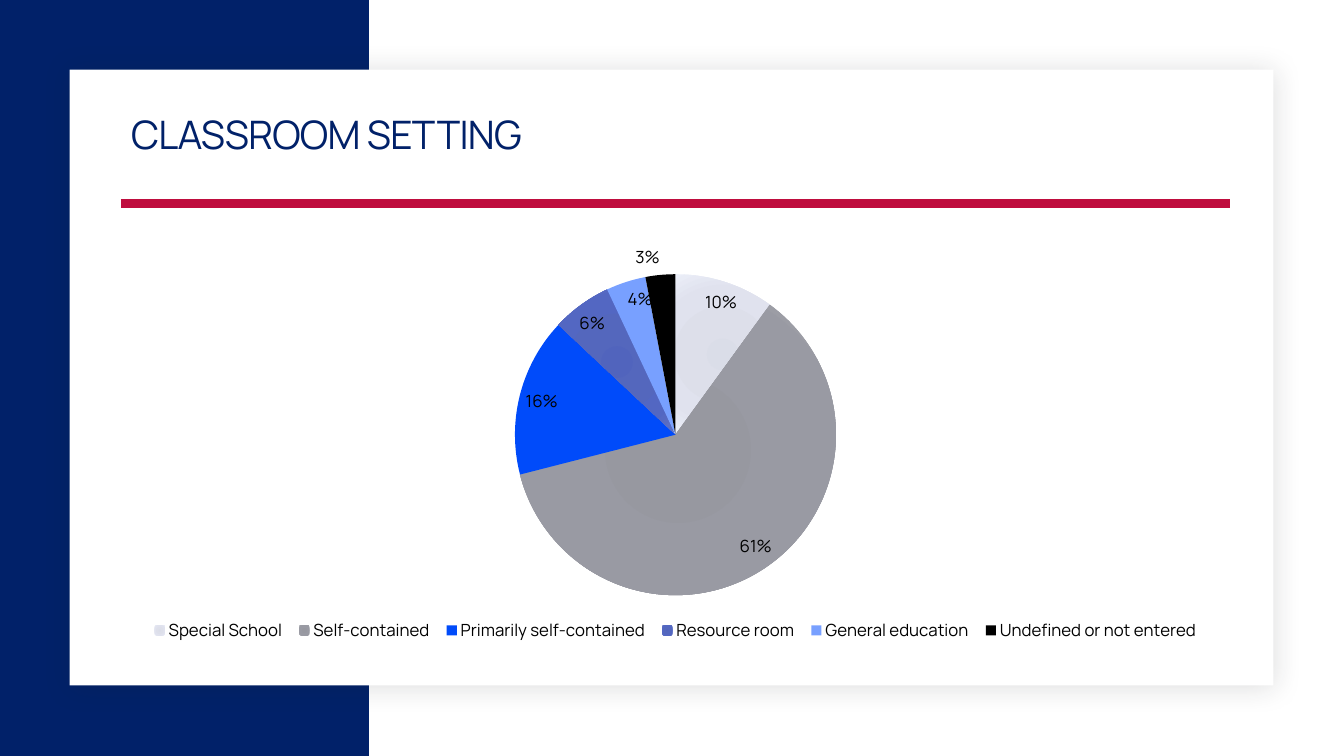
from pptx import Presentation
from pptx import oxml
from pptx.chart import data
from pptx.dml import color
from pptx.enum import chart as charts, shapes, text
from pptx.oxml import ns
from pptx.util import Inches, Pt

FONT = "Manrope"
NAVY, RED, WHITE, BLACK = "012169", "BF0D3E", "FFFFFF", "000000"
LEFT, WIDTH = 1.2, 11


def rgb(value):
    return color.RGBColor.from_string(value)


def style(font, size, shade):
    font.name = FONT
    font.size = Pt(size)
    font.color.rgb = rgb(shade)


deck = Presentation()
deck.slide_width, deck.slide_height = Inches(13.33), Inches(7.5)
slide = deck.slides.add_slide(deck.slide_layouts[5])

panels = []
for box, shade in [((0, 0, 3.66, 7.5), NAVY), ((0.69, 0.69, 11.94, 6.11), WHITE)]:
    panel = slide.shapes.add_shape(shapes.MSO_SHAPE.RECTANGLE, *map(Inches, box))
    panel.shadow.inherit = False
    panel.fill.solid()
    panel.fill.fore_color.rgb = rgb(shade)
    panel.line.fill.background()
    panels.append(panel)

band, card = panels
card_effects = card._element.spPr.find(ns.qn("a:effectLst"))
card_effects.append(oxml.parse_xml(
    f'<a:outerShdw {ns.nsdecls("a")} blurRad="{Pt(20)}" dist="{Pt(2)}" dir="2700000" '
    'algn="ctr" rotWithShape="0"><a:srgbClr val="1F2125"><a:alpha val="15000"/>'
    '</a:srgbClr></a:outerShdw>'))

rule = slide.shapes.add_connector(
    shapes.MSO_CONNECTOR.STRAIGHT, Inches(LEFT), Inches(2.02), Inches(LEFT + WIDTH), Inches(2.02))
rule.line.color.rgb = rgb(RED)
rule.line.width = Pt(6)
rule._element.spPr.append(oxml.parse_xml(f'<a:effectLst {ns.nsdecls("a")}/>'))

title = slide.shapes.title
slide.shapes._spTree.append(title._element)
title.left, title.top, title.width, title.height = map(Inches, (LEFT, 1.04, WIDTH, 0.64))
title.text_frame.text = "CLASSROOM SETTING"
title.text_frame.vertical_anchor = text.MSO_ANCHOR.MIDDLE
heading = title.text_frame.paragraphs[0]
heading.alignment = text.PP_ALIGN.LEFT
heading.line_spacing = 0.9
style(heading.font, 28, NAVY)
heading.font._element.set("spc", "-50")

settings = [
    ("Special School", 10, ["DADDE8", "DDDFEA", "E0E2EE", "EBEEF8"]),
    ("Self-contained", 61, ["95969F", "9798A0", "999AA3", "A1A2A9"]),
    ("Primarily self-contained", 16, ["004BFA"]),
    ("Resource room", 6, ["5164BD", "5467BD", "5367C2", "6072C2"]),
    ("General education", 4, ["78A0FF"]),
    ("Undefined or not entered", 3, [BLACK]),
]
shares = data.CategoryChartData()
shares.categories = [name for name, share, shades in settings]
shares.add_series("Series 1", [share for name, share, shades in settings])
pie = slide.shapes.add_chart(
    charts.XL_CHART_TYPE.PIE, *map(Inches, (LEFT, 2.31, WIDTH, 4.11)), shares).chart
style(pie.font, 10, BLACK)
pie.has_title = False
pie.has_legend = True
pie.legend.position = charts.XL_LEGEND_POSITION.BOTTOM
pie.legend.include_in_layout = False
style(pie.legend.font, 12, BLACK)

plot = pie.plots[0]
plot.vary_by_categories = True
series = plot.series[0]
labels = series.data_labels
labels.show_percentage = True
labels.show_value = False
labels.number_format = "0%"
labels.number_format_is_linked = False
labels.position = charts.XL_LABEL_POSITION.BEST_FIT
style(labels.font, 12, BLACK)

general = series.points[4].data_label
style(general.font, 12, BLACK)
general.position = charts.XL_LABEL_POSITION.INSIDE_END
for tag, shown in [("showVal", "0"), ("showPercent", "1")]:
    series._element.xpath(f"c:dLbls/c:dLbl/c:{tag}")[0].set("val", shown)

for index, (name, share, shades) in enumerate(settings):
    wedge = series.points[index].format
    wedge.line.fill.background()
    if len(shades) == 1:
        wedge.fill.solid()
        wedge.fill.fore_color.rgb = rgb(shades[0])
        continue
    wedge.fill.gradient()
    gradient = series._element.xpath(f'c:dPt[c:idx/@val="{index}"]/c:spPr/a:gradFill')[0]
    stops = "".join(
        f'<a:gs pos="{place}000"><a:srgbClr val="{shade}"/></a:gs>'
        for place, shade in zip((0, 34, 70, 100), shades))
    gradient.getparent().replace(gradient, oxml.parse_xml(
        f'<a:gradFill {ns.nsdecls("a")}><a:gsLst>{stops}</a:gsLst><a:path path="circle">'
        '<a:fillToRect l="100000" t="100000" r="100000" b="100000"/></a:path></a:gradFill>'))

plot_area = pie._chartSpace.xpath("c:chart/c:plotArea")[0]
legend = pie.legend._element
target = '<c:layoutTarget val="inner"/>'
for part, place, inner in [
    (plot_area, (0.355, 0.1, 0.29, 0.775), target),
    (legend, (0.02, 0.92, 0.96, 0.08), ""),
]:
    for automatic in part.findall(ns.qn("c:layout")):
        part.remove(automatic)
    sizes = "".join(f'<c:{key} val="{value}"/>' for key, value in zip("xywh", place))
    layout = oxml.parse_xml(
        f'<c:layout {ns.nsdecls("c")}><c:manualLayout>{inner}<c:xMode val="edge"/>'
        f'<c:yMode val="edge"/>{sizes}</c:manualLayout></c:layout>')
    part.insert(0 if part is plot_area else 1, layout)

deck.save("out.pptx")
